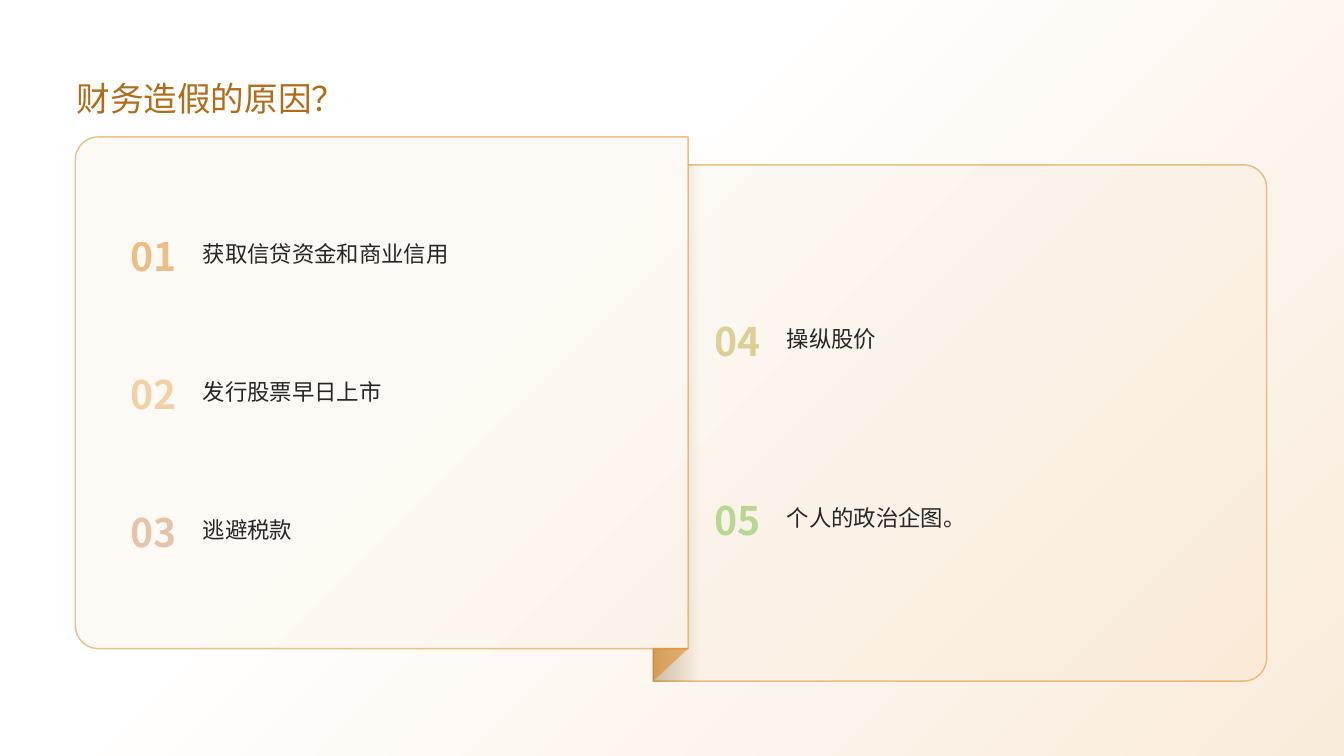
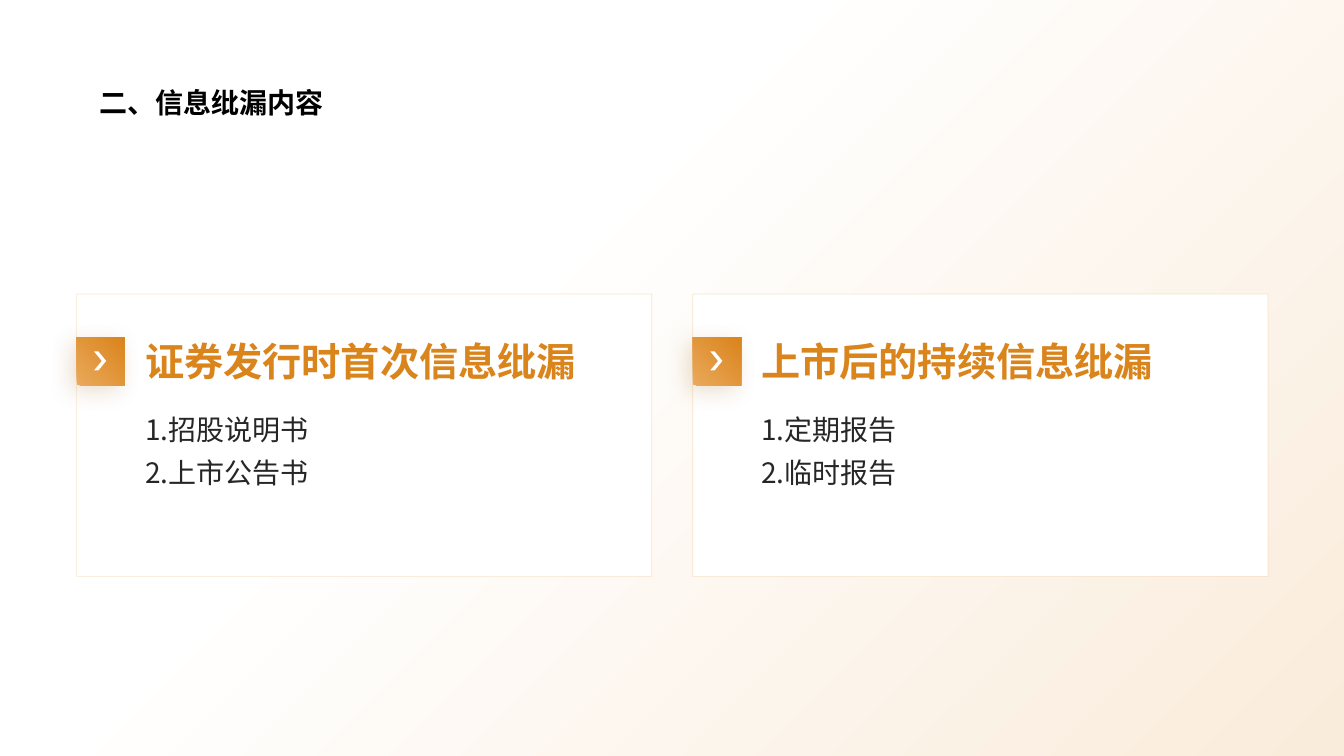
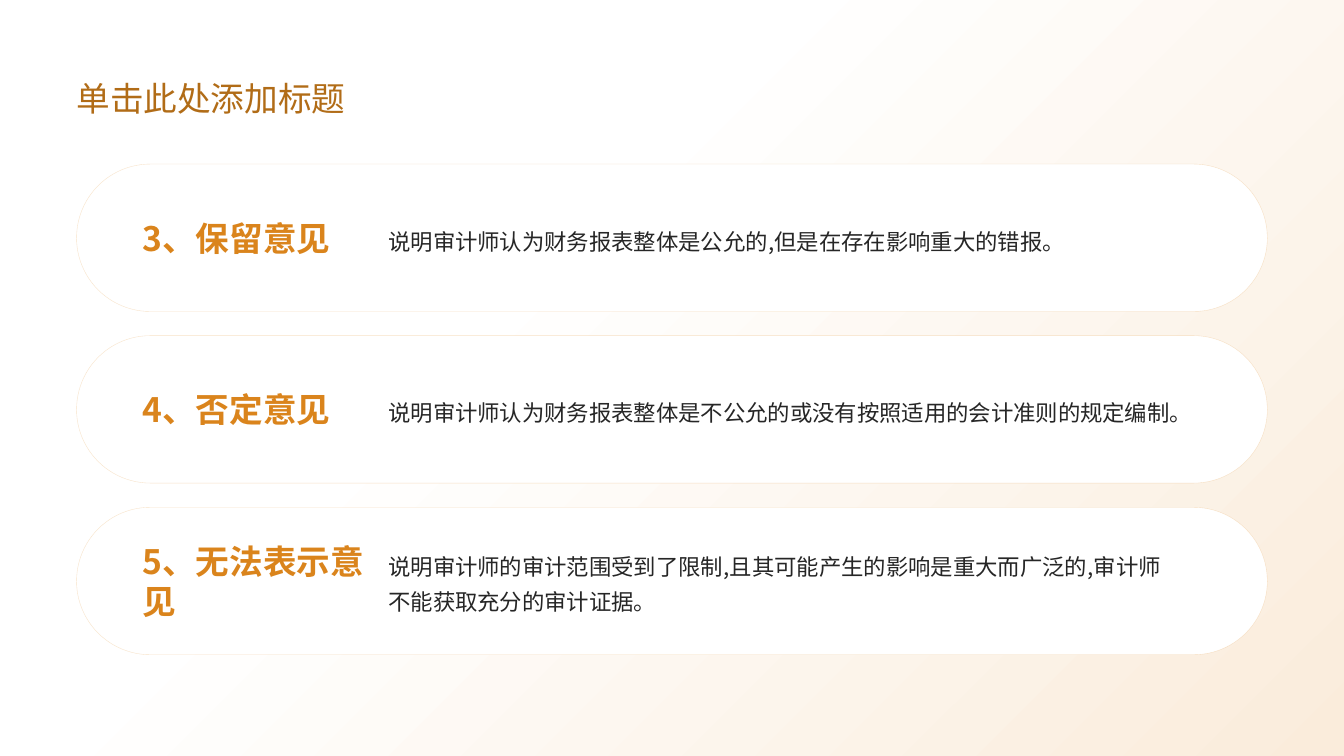
from dataclasses import dataclass
from math import cos, radians, sin

from lxml.etree import SubElement
from pptx import Presentation
from pptx.dml.color import RGBColor
from pptx.enum.lang import MSO_LANGUAGE_ID
from pptx.enum.shapes import MSO_SHAPE
from pptx.enum.text import MSO_ANCHOR, PP_ALIGN
from pptx.oxml.ns import qn
from pptx.util import Inches, Pt

SLIDE_WIDTH, SLIDE_HEIGHT = Inches(13.33), Inches(7.5)
COLUMN, ROW = SLIDE_WIDTH / 100, SLIDE_HEIGHT / 100


@dataclass(frozen=True)
class Theme:
    font: str = "Noto Sans CJK SC"
    white: str = "FFFFFF"
    cream: str = "FAECDB"
    peach: str = "F3CEA1"
    sand: str = "EDB673"
    light_orange: str = "EAA95B"
    orange: str = "DA841C"
    title: str = "B16C17"
    shade: str = "6D420E"
    shadow: str = "A36315"
    ink: str = "262626"
    black: str = "000000"
    copper: str = "CC8D62"
    olive: str = "BCAA3E"
    green: str = "77BC3E"
    body_size: int = 16
    list_size: int = 20
    heading_size: int = 24
    large_size: int = 28


THEME = Theme()

TITLE = {"size": THEME.heading_size, "color": THEME.title, "anchor": MSO_ANCHOR.BOTTOM}
BOLD_TITLE = {"size": THEME.list_size, "color": THEME.black, "bold": True,
              "anchor": MSO_ANCHOR.BOTTOM, "align": PP_ALIGN.CENTER, "spacing": 1.2}
NUMBER = {"size": THEME.large_size, "bold": True, "opacity": 50, "align": PP_ALIGN.CENTER}
ITEM = {"size": THEME.body_size, "color": THEME.ink, "spacing": 1.5}
CARD_HEADING = {"size": THEME.large_size, "color": THEME.orange, "bold": True,
                "anchor": MSO_ANCHOR.BOTTOM}
CARD_LIST = {"size": THEME.list_size, "color": THEME.ink, "spacing": 1.3,
             "anchor": MSO_ANCHOR.TOP}
OPINION_HEADING = {"size": THEME.heading_size, "color": THEME.orange, "bold": True}
OPINION_TEXT = {"size": THEME.body_size, "color": THEME.ink, "spacing": 1.3}


@dataclass(frozen=True)
class Box:
    """A region in columns and rows, each a hundredth of the slide."""
    left: float
    top: float
    width: float
    height: float

    def inside(self, left, top, width, height):
        return Box(self.left + left, self.top + top, width, height)

    def lengths(self):
        return (round(self.left * COLUMN), round(self.top * ROW),
                round(self.width * COLUMN), round(self.height * ROW))


TITLE_BOX = Box(5.7, 5.2, 88.6, 10.5)
BOLD_TITLE_BOX = Box(5.33, 5.2, 20.85, 10.5)
SPREAD_BOX = Box(5.6, 18.1, 88.65, 72)
CARD_BOX = Box(5.7, 38.9, 42.8, 37.35)
CARD_PITCH = 45.85
PILL_BOX = Box(5.7, 21.7, 88.6, 19.5)
PILL_PITCH = 22.7


# Formatting
def set_opacity(element, *opacities):
    for color, opacity in zip(list(element.iter(qn("a:srgbClr"))), opacities):
        SubElement(color, qn("a:alpha"), val=str(opacity * 1000))


def fill_gradient(fill, stops, angle):
    fill.gradient()
    fill.gradient_angle = angle
    for stop, (position, color) in zip(fill.gradient_stops, stops):
        stop.position = position
        stop.color.rgb = RGBColor.from_string(color)


def format_shape(shape, color, opacity=100, line=None):
    shape.shadow.inherit = False
    shape.fill.solid()
    shape.fill.fore_color.rgb = RGBColor.from_string(color)
    set_opacity(shape.element.spPr, opacity)
    if line is None:
        shape.line.fill.background()
        return
    line_color, line_width, line_opacity = line
    shape.line.color.rgb = RGBColor.from_string(line_color)
    shape.line.width = Pt(line_width)
    set_opacity(shape.element.spPr.find(qn("a:ln")), line_opacity)


def add_preset(slide, preset, box, color, opacity=100, line=None):
    shape = slide.shapes.add_shape(preset, *box.lengths())
    format_shape(shape, color, opacity, line)
    return shape


def add_outline(slide, points, closed=True):
    places = [(round(x * COLUMN), round(y * ROW)) for x, y in points]
    builder = slide.shapes.build_freeform(*places[0])
    builder.add_line_segments(places[1:], close=closed)
    return builder.convert_to_shape()


def add_text(slide, box, lines, style):
    frame = slide.shapes.add_textbox(*box.lengths()).text_frame
    frame_format = {"word_wrap": True, "margin_left": 0, "margin_top": 0,
                    "margin_right": 0, "margin_bottom": 0,
                    "vertical_anchor": style.get("anchor", MSO_ANCHOR.MIDDLE)}
    for name, value in frame_format.items():
        setattr(frame, name, value)
    font_format = {"name": THEME.font, "size": Pt(style["size"]),
                   "bold": style.get("bold", False),
                   "language_id": MSO_LANGUAGE_ID.SIMPLIFIED_CHINESE}
    for index, line in enumerate(lines):
        paragraph = frame.add_paragraph() if index else frame.paragraphs[0]
        paragraph.alignment = style.get("align", PP_ALIGN.LEFT)
        paragraph.line_spacing = style.get("spacing", 1.0)
        run = paragraph.add_run()
        run.text = line
        for name, value in font_format.items():
            setattr(run.font, name, value)
        run.font.color.rgb = RGBColor.from_string(style["color"])
        properties = run.font.color and run._r.get_or_add_rPr()
        SubElement(properties, qn("a:ea"), typeface=THEME.font)
        if "opacity" in style:
            set_opacity(properties, style["opacity"])


def rounded_corner(center_x, center_y, start):
    """Points of a quarter turn, clockwise from the start angle."""
    radius_x, radius_y = 1.73, 3.07
    angles = [radians(start + step * 7.5) for step in range(13)]
    return [(center_x + radius_x * cos(angle), center_y + radius_y * sin(angle))
            for angle in angles]


# Folded pages
def add_pages(slide, box):
    left, top = box.left, box.top
    right, bottom = left + box.width, top + box.height
    spine, fold = left + 45.6, left + 43
    page_top, page_bottom = top + 3.7, top + 67.7
    inset_x, inset_y = 1.73, 3.07
    page_line = (THEME.orange, 1, 50)

    right_page = add_outline(slide, [
        (spine, page_top),
        *rounded_corner(right - inset_x, page_top + inset_y, -90),
        *rounded_corner(right - inset_x, bottom - inset_y, 0),
        (fold, bottom), (fold, page_bottom), (spine, page_bottom)])
    left_page = add_outline(slide, [
        (spine, page_bottom),
        *rounded_corner(left + inset_x, page_bottom - inset_y, 90),
        *rounded_corner(left + inset_x, top + inset_y, 180),
        (spine, top), (spine, page_top)], closed=False)
    for page in (right_page, left_page):
        format_shape(page, THEME.peach, 10, page_line)

    spine_shade = add_outline(slide, [
        (spine, page_top), (spine + 1.5, page_top), (spine + 1.5, bottom),
        (fold, bottom), (fold, page_bottom), (spine, page_bottom)])
    format_shape(spine_shade, THEME.shade)
    fill_gradient(spine_shade.fill, [(0, THEME.shade), (0.83, THEME.shade)], 0)
    set_opacity(spine_shade.element.spPr, 32, 0)

    corner_box = Box(fold, page_bottom, spine - fold, bottom - page_bottom)
    corner = add_preset(slide, MSO_SHAPE.RIGHT_TRIANGLE, corner_box, THEME.orange, 53)
    corner.element.spPr.find(qn("a:xfrm")).set("flipV", "1")


def add_numbered_item(slide, box, number, color, text):
    number_height = 10.8
    number_top = (box.height - number_height) / 2 + 1.2
    add_text(slide, box.inside(6.4, 0, 32.7, box.height), [text], ITEM)
    add_text(slide, box.inside(0, number_top, 5.45, number_height),
             [f"{number:02d}"], {**NUMBER, "color": color})


def add_reasons_slide(slide):
    add_text(slide, TITLE_BOX, ["财务造假的原因？"], TITLE)
    add_pages(slide, SPREAD_BOX)
    pages = [
        (SPREAD_BOX.inside(3.1, 7, 39.1, 15.2), 18.2,
         [(THEME.orange, "获取信贷资金和商业信用"),
          (THEME.light_orange, "发行股票早日上市"),
          (THEME.copper, "逃避税款")]),
        (SPREAD_BOX.inside(46.55, 15.1, 39.1, 21.3), 23.7,
         [(THEME.olive, "操纵股价"), (THEME.green, "个人的政治企图。")]),
    ]
    number = 0
    for first_box, pitch, items in pages:
        for index, (color, text) in enumerate(items):
            number += 1
            item_box = first_box.inside(0, index * pitch, first_box.width, first_box.height)
            add_numbered_item(slide, item_box, number, color, text)


# Cards with an arrow badge
def add_badge(slide, box):
    badge = add_preset(slide, MSO_SHAPE.RECTANGLE, box, THEME.orange)
    fill_gradient(badge.fill, [(0, THEME.light_orange), (1, THEME.orange)], 45)
    effects = badge.element.spPr.find(qn("a:effectLst"))
    shadow = SubElement(effects, qn("a:outerShdw"), blurRad=str(Pt(16)), dist=str(Pt(6)),
                        dir=str(135 * 60000), algn="tr", rotWithShape="0")
    SubElement(shadow, qn("a:srgbClr"), val=THEME.shadow)
    set_opacity(shadow, 20)
    chevron = add_preset(slide, MSO_SHAPE.CHEVRON, box.inside(1.3, 1.9, 0.9, 2.5), THEME.white)
    chevron.adjustments[0] = 0.64


def add_card(slide, box, heading, lines):
    add_preset(slide, MSO_SHAPE.RECTANGLE, box, THEME.white, line=(THEME.sand, 0.5, 35))
    add_text(slide, box.inside(5.1, 4.9, 35.9, 7.1), [heading], CARD_HEADING)
    add_text(slide, box.inside(5.1, 14.3, 35.9, 20.3), lines, CARD_LIST)
    add_badge(slide, box.inside(0, 5.7, 3.6, 6.4))


def add_disclosure_slide(slide):
    add_text(slide, BOLD_TITLE_BOX, ["二、信息纰漏内容"], BOLD_TITLE)
    cards = [("证券发行时首次信息纰漏", ["1.招股说明书", "2.上市公告书"]),
             ("上市后的持续信息纰漏", ["1.定期报告", "2.临时报告"])]
    for index, (heading, lines) in enumerate(cards):
        card_box = CARD_BOX.inside(index * CARD_PITCH, 0, CARD_BOX.width, CARD_BOX.height)
        add_card(slide, card_box, heading, lines)


# Pills with an audit opinion
def add_opinion(slide, box, heading, text):
    pill = add_preset(slide, MSO_SHAPE.ROUNDED_RECTANGLE, box, THEME.white,
                      line=(THEME.sand, 0.25, 40))
    pill.adjustments[0] = 0.5
    add_text(slide, box.inside(4.9, 1.5, 18.1, 16.5), [heading], OPINION_HEADING)
    add_text(slide, box.inside(23.2, 2.1, 58.35, 15.1), [text], OPINION_TEXT)


def add_opinions_slide(slide):
    add_text(slide, TITLE_BOX, ["单击此处添加标题"], TITLE)
    opinions = [
        ("3、保留意见", "说明审计师认为财务报表整体是公允的,但是在存在影响重大的错报。"),
        ("4、否定意见", "说明审计师认为财务报表整体是不公允的或没有按照适用的会计准则的规定编制。"),
        ("5、无法表示意见", "说明审计师的审计范围受到了限制,且其可能产生的影响是重大而广泛的,"
                     "审计师不能获取充分的审计证据。"),
    ]
    for index, (heading, text) in enumerate(opinions):
        pill_box = PILL_BOX.inside(0, index * PILL_PITCH, PILL_BOX.width, PILL_BOX.height)
        add_opinion(slide, pill_box, heading, text)


def main():
    presentation = Presentation()
    presentation.slide_width, presentation.slide_height = SLIDE_WIDTH, SLIDE_HEIGHT
    # Shared background
    fill_gradient(presentation.slide_master.background.fill,
                  [(0.37, THEME.white), (1, THEME.cream)], 315)
    blank_layout = presentation.slide_layouts[6]
    for add_content in (add_reasons_slide, add_disclosure_slide, add_opinions_slide):
        add_content(presentation.slides.add_slide(blank_layout))
    presentation.save("out.pptx")


if __name__ == "__main__":
    main()
